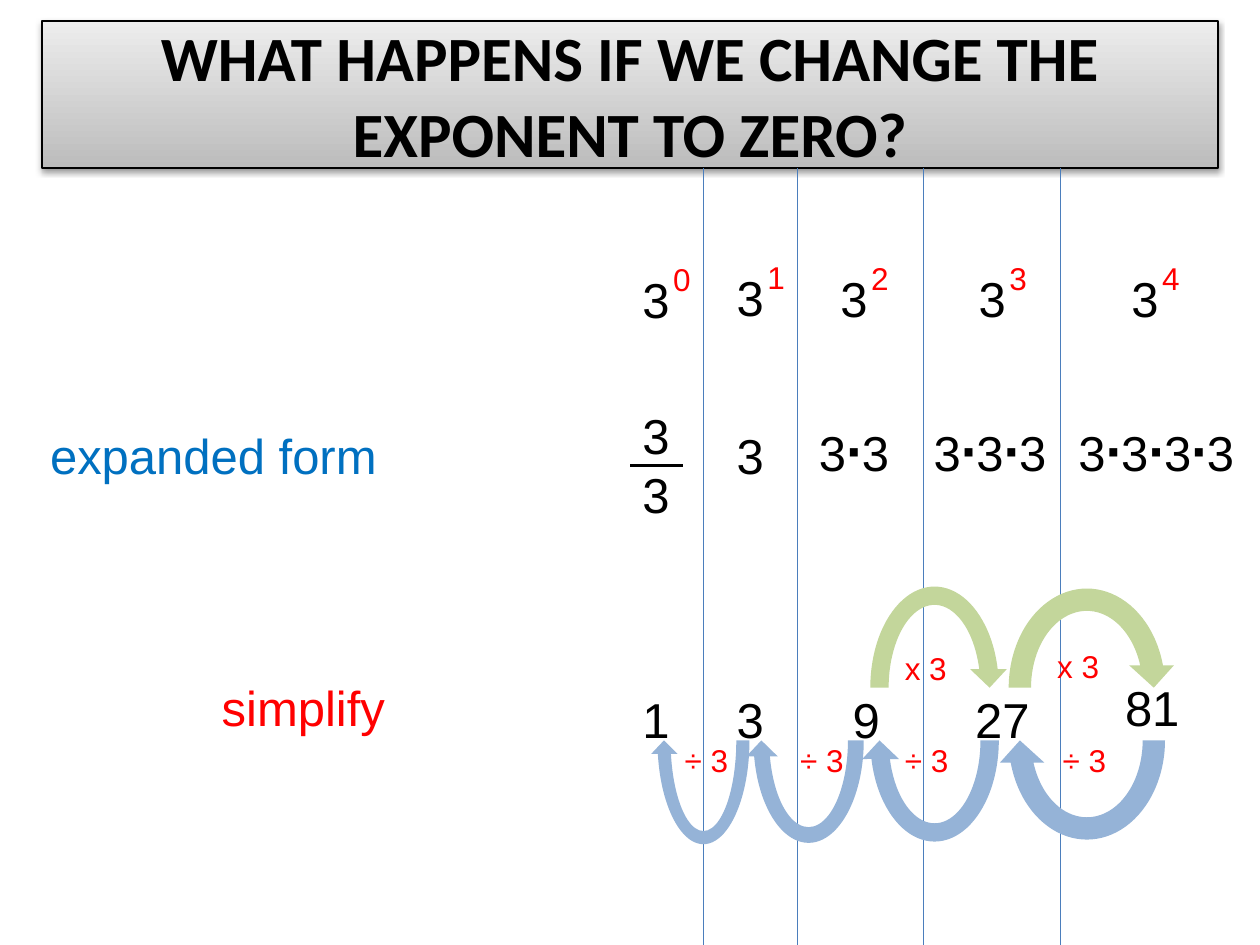
from lxml import etree
from pptx import Presentation
from pptx.dml.color import RGBColor
from pptx.enum import shapes, text
from pptx.oxml.ns import qn
from pptx.util import Cm, Pt

THEME = dict(
    ink="000000", red="FF0000", blue="0070C0", rule="4B7EBC",
    times="C3D69B", divide="95B3D7", light="EDEDED", dark="BCBCBC",
    head="Calibri", body="Arial", title=36, big=28, small=18, dot=32,
)

TITLE = "WHAT HAPPENS IF WE CHANGE THE EXPONENT TO ZERO?"
# words, left, top, width, colour
NAMES = [
    ("expanded form", 0.76, 8.46, 7.29, "blue"),
    ("simplify", 4.22, 13.54, 3.84, "red"),
]
# one entry per power of 3: (left, top) of the power, the expansion, the value
POWERS = [
    ((12.7, 5.31), (12.7, 8.05), (12.7, 13.77)),
    ((14.6, 5.26), (14.6, 8.46), (14.6, 13.77)),
    ((16.69, 5.28), (16.26, 8.26), (16.94, 13.77)),
    ((19.48, 5.28), (18.57, 8.26), (19.41, 13.77)),
    ((22.56, 5.28), (21.49, 8.26), (22.43, 13.54)),
]
RULES = [14.18, 16.08, 18.62, 21.38]
# arrow left, arrow width, label left, label top
DIVIDE = [
    (13.12, 2.12, 13.55, 14.82),
    (15.03, 2.54, 15.88, 14.82),
    (17.36, 2.96, 17.99, 14.82),
    (20.11, 3.6, 21.17, 14.82),
]
TIMES = [
    (17.36, 2.96, 17.99, 12.95),
    (20.11, 3.6, 21.06, 12.91),
]
DIGIT = 0.55    # width of a large digit
PAD = 0.51      # side insets of a text box
FACTOR = 0.88   # width of a dot and a digit


def tint(key):
    return RGBColor.from_string(THEME[key])


def style(font, size, color="ink", face="body", bold=False):
    font.name, font.size, font.bold = THEME[face], Pt(THEME[size]), bold
    font.color.rgb = tint(color)


def write(slide, lines, x, y, wide, color="ink", size="big"):
    high = {"big": 0.26, "small": 0.29}[size] + len(lines) * Pt(THEME[size]).cm * 1.2
    frame = slide.shapes.add_textbox(Cm(x), Cm(y), Cm(wide), Cm(high)).text_frame
    frame.word_wrap = False
    frame.auto_size = text.MSO_AUTO_SIZE.SHAPE_TO_FIT_TEXT
    frame.text = "\n".join(lines)
    for para in frame.paragraphs:
        style(para.font, size, color)
    return frame


def product(slide, count, x, y):
    """Write 3 as a factor, count times, with bold dots between."""
    wide = PAD + DIGIT + FACTOR * (count - 1)
    para = write(slide, [""], x, y, wide).paragraphs[0]
    for sign in "∙".join("3" * count):
        run = para.add_run()
        run.text = sign
        dot = sign == "∙"
        style(run.font, "dot" if dot else "big", bold=dot)


def line(slide, start, end, color, weight):
    rule = slide.shapes.add_connector(
        shapes.MSO_CONNECTOR.STRAIGHT, *map(Cm, start + end))
    rule.line.color.rgb = tint(color)
    rule.line.width = Pt(weight)
    etree.SubElement(rule._element.spPr, qn("a:effectLst"))


def step(slide, spot, sign, color, top, turn):
    """Draw one curved arrow and the operation it stands for."""
    x, wide, left, y = spot
    arrow = slide.shapes.add_shape(
        shapes.MSO_SHAPE.CIRCULAR_ARROW, Cm(x), Cm(top), Cm(wide), Cm(4.45))
    arrow.rotation = turn
    arrow.shadow.inherit = False
    arrow.fill.solid()
    arrow.fill.fore_color.rgb = tint(color)
    arrow.line.fill.background()
    write(slide, [sign + " 3"], left, y, 1.38, "red", "small")


def head(slide):
    box = slide.shapes.title
    box.left, box.top, box.width, box.height = map(Cm, (0.85, 0.42, 23.7, 2.97))
    box.fill.gradient()
    box.fill.gradient_angle = 90
    for stop, key in zip(box.fill.gradient_stops, ("dark", "light")):
        stop.color.rgb = tint(key)
    box.line.color.rgb = tint("ink")
    box.line.width = Pt(1)
    effects = etree.SubElement(box._element.spPr, qn("a:effectLst"))
    shade = etree.SubElement(effects, qn("a:outerShdw"), blurRad="40000",
                             dist="20000", dir="5400000", rotWithShape="0")
    color = etree.SubElement(shade, qn("a:srgbClr"), val=THEME["ink"])
    etree.SubElement(color, qn("a:alpha"), val="38000")
    frame = box.text_frame
    frame.text = TITLE
    frame.word_wrap = True
    frame.auto_size = text.MSO_AUTO_SIZE.NONE
    frame.vertical_anchor = text.MSO_ANCHOR.MIDDLE
    para = frame.paragraphs[0]
    para.alignment = text.PP_ALIGN.CENTER
    style(para.font, "title", face="head", bold=True)


def main():
    deck = Presentation()
    deck.slide_width, deck.slide_height = Cm(25.4), Cm(19.05)
    slide = deck.slides.add_slide(deck.slide_layouts[5])
    head(slide)
    for words, x, y, wide, color in NAMES:
        write(slide, [words], x, y, wide, color)
    for x in RULES:
        line(slide, (x, 3.39), (x, 19.05), "rule", 0.75)

    for power, (base, spread, value) in enumerate(POWERS):
        x, y = base
        write(slide, ["3"], x, y, PAD + DIGIT)
        write(slide, [str(power)], x + 0.62, y - 0.19, 0.87, "red", "small")
        if power > 1:
            product(slide, power, *spread)
        else:
            write(slide, ["3"] * (2 - power), *spread, PAD + DIGIT)
        total = str(3 ** power)
        write(slide, [total], *value, PAD + DIGIT * len(total))
    line(slide, (12.7, 9.38), (13.76, 9.38), "ink", 2)

    for spot in TIMES:
        step(slide, spot, "x", "times", 11.64, 0)
    for spot in DIVIDE:
        step(slide, spot, "÷", "divide", 12.7, 180)
    deck.save("out.pptx")


if __name__ == "__main__":
    main()
